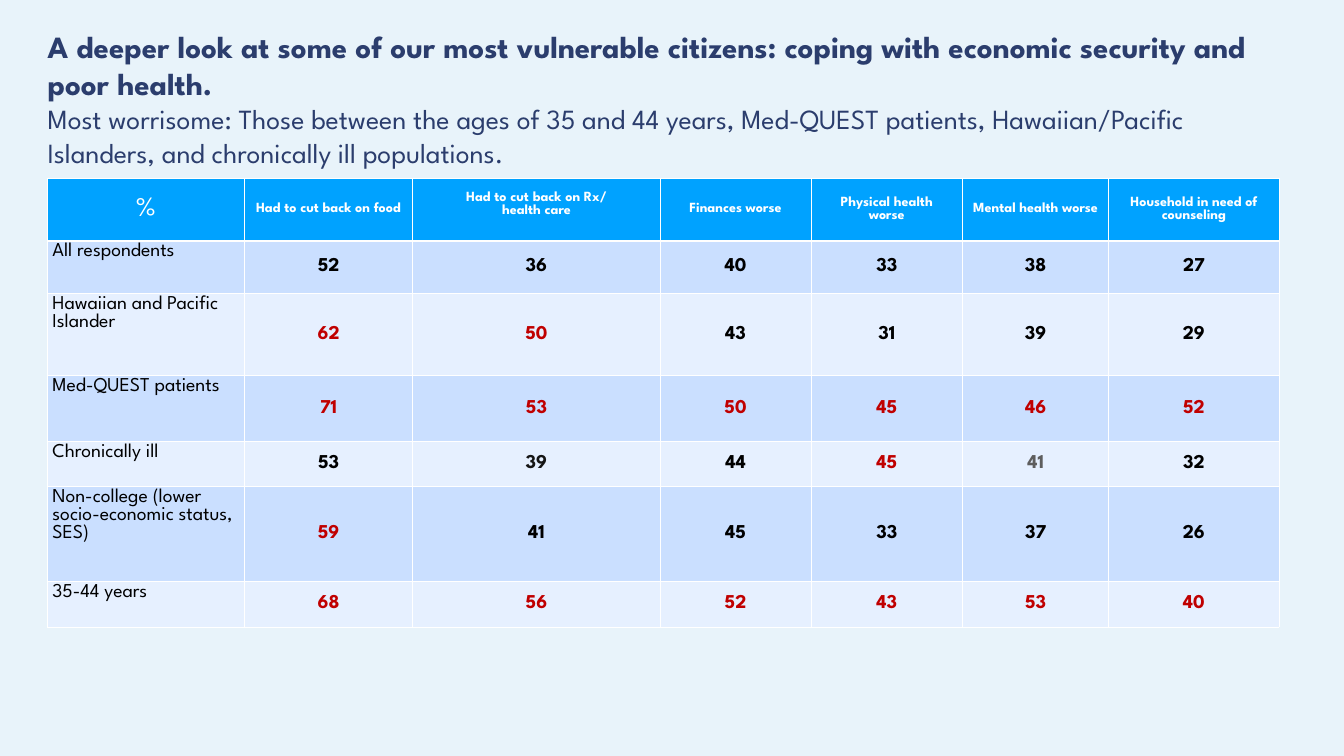
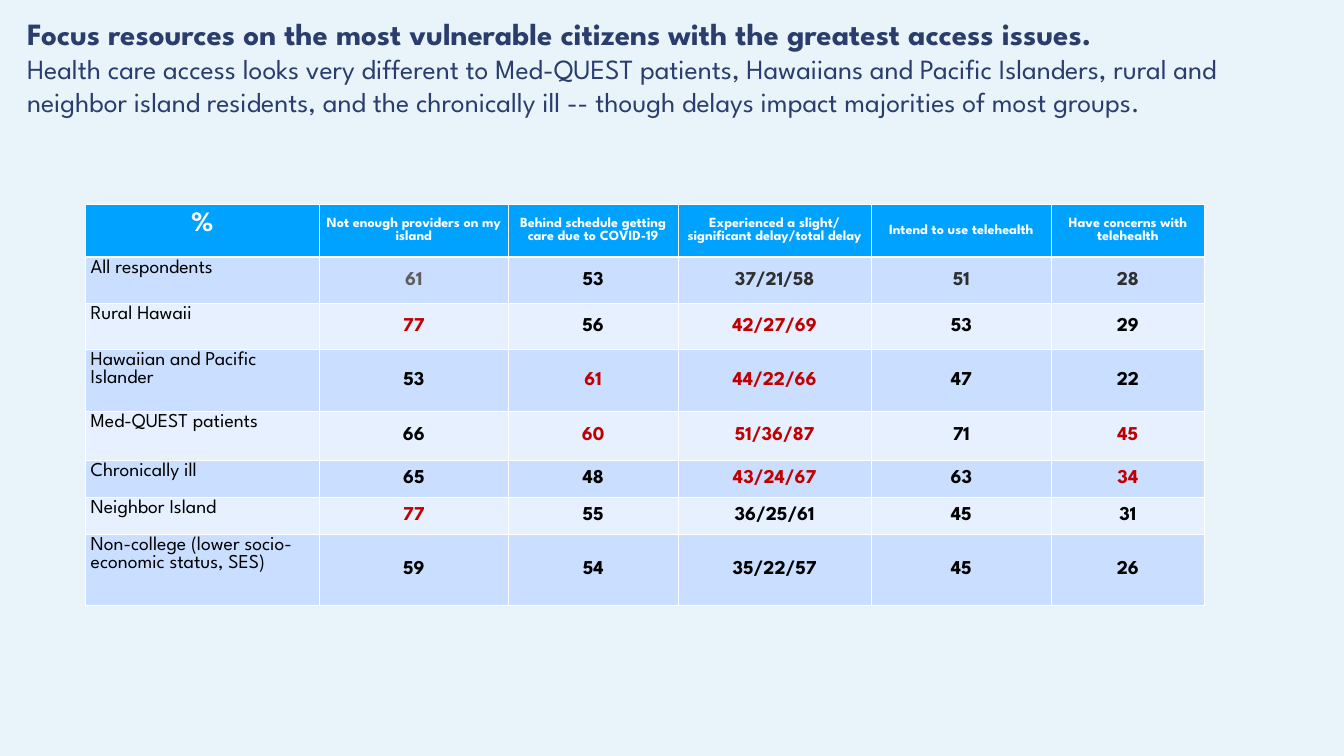
from lxml import etree
from pptx import Presentation
from pptx.dml.color import RGBColor
from pptx.enum import text as t
from pptx.oxml.ns import qn
from pptx.util import Pt

FONT = "League Spartan"
PAGE, NAVY, WHITE, BLACK = "E8F3FA", "2B3D6D", "FFFFFF", "000000"
HEADER, BANDS = "00A2FF", ("CADFFF", "E6F0FF")
# A mark after a value picks its colour: "62!" is an alert.
TONES = {"!": "C00000", "~": "5E5E5E", "+": "2F2F2F", "^": "151515"}


def color(value):
    return RGBColor.from_string(value)


def add_run(paragraph, words, size, ink, bold=False):
    run = paragraph.add_run()
    run.text = words
    font = run.font
    font.name, font.size, font.bold = FONT, Pt(size), bold
    font.color.rgb = color(ink)


def set_title(slide, left, top, headline, detail):
    title = slide.shapes.title
    title.left, title.top, title.width, title.height = (
        Pt(left), Pt(top), Pt(1730), Pt(113))
    frame = title.text_frame
    frame.word_wrap = True
    frame.auto_size = t.MSO_AUTO_SIZE.NONE
    frame.vertical_anchor = t.MSO_ANCHOR.TOP
    frame.margin_left = frame.margin_right = Pt(4)
    frame.margin_top = frame.margin_bottom = Pt(4)
    paragraph = frame.paragraphs[0]
    paragraph.alignment = t.PP_ALIGN.LEFT
    paragraph.line_spacing = 1.0
    add_run(paragraph, headline, 44.1, NAVY, bold=True)
    paragraph.add_line_break()
    add_run(paragraph, detail, 39.6, NAVY)


def set_borders(cell, bottom):
    properties = cell._tc.get_or_add_tcPr()
    for side, width in (("L", 1), ("R", 1), ("T", 1), ("B", bottom)):
        line = etree.SubElement(properties, qn(f"a:ln{side}"), w=str(Pt(width)))
        fill = etree.SubElement(line, qn("a:solidFill"))
        etree.SubElement(fill, qn("a:srgbClr"), val=WHITE)


def fill_cell(cell, words, size, ink, back, bold=True, centred=True, bottom=1):
    set_borders(cell, bottom)
    cell.fill.solid()
    cell.fill.fore_color.rgb = color(back)
    cell.vertical_anchor = t.MSO_ANCHOR.MIDDLE if centred else t.MSO_ANCHOR.TOP
    for index, line in enumerate(words.split("\n")):
        frame = cell.text_frame
        paragraph = frame.add_paragraph() if index else frame.paragraphs[0]
        paragraph.alignment = t.PP_ALIGN.CENTER if centred else t.PP_ALIGN.LEFT
        add_run(paragraph, line, size, ink, bold)


def fill_value(cell, marked, back):
    ink = TONES.get(marked[-1], BLACK)
    fill_cell(cell, marked.rstrip("".join(TONES)), 28, ink, back)
    cell.margin_left = cell.margin_right = cell.margin_top = Pt(0.72)
    cell.margin_bottom = 0


def add_survey_table(slide, left, top, widths, heights, headings, groups,
                     percent_bold):
    table = slide.shapes.add_table(
        len(heights), len(widths), Pt(left), Pt(top),
        Pt(sum(widths)), Pt(sum(heights))).table
    for column, width in zip(table.columns, widths):
        column.width = Pt(width)
    for row, height in zip(table.rows, heights):
        row.height = Pt(height)
    fill_cell(table.cell(0, 0), "%", 40, WHITE, HEADER, percent_bold, bottom=3)
    for column, heading in enumerate(headings, 1):
        fill_cell(table.cell(0, column), heading, 20, WHITE, HEADER, bottom=3)
    for row, (group, values) in enumerate(groups, 1):
        back = BANDS[(row - 1) % 2]
        fill_cell(table.cell(row, 0), group, 28, BLACK, back,
                  bold=False, centred=False)
        for column, value in enumerate(values.split(), 1):
            fill_value(table.cell(row, column), value, back)
    return table


def add_coping_slide(deck):
    slide = deck.slides.add_slide(deck.slide_layouts[5])
    set_title(
        slide, 64, 36,
        "A deeper look at some of our most vulnerable citizens: coping with "
        "economic security and poor health.",
        "Most worrisome: Those between the ages of 35 and 44 years, Med-QUEST "
        "patients, Hawaiian/Pacific Islanders, and chronically ill populations.")
    table = add_survey_table(
        slide, 67.7, 255,
        widths=(281.5, 240.5, 353.5, 215.3, 216.7, 208.8, 243.4),
        heights=(88.9, 75.1, 117.4, 93.8, 64.2, 135.7, 65.7),
        headings=("Had to cut back on food",
                  "Had to cut back on Rx/\nhealth care",
                  "Finances worse", "Physical health\nworse",
                  "Mental health worse", "Household in need of counseling"),
        groups=(
            ("All respondents", "52 36 40 33 38 27"),
            ("Hawaiian and Pacific Islander", "62! 50! 43 31 39 29"),
            ("Med-QUEST patients", "71! 53! 50! 45! 46! 52!"),
            ("Chronically ill", "53 39^ 44 45! 41~ 32"),
            ("Non-college (lower socio-economic status, SES)",
             "59! 41 45 33 37 26"),
            ("35-44 years", "68! 56! 52! 43! 53! 40!")),
        percent_bold=False)
    table.cell(0, 2).margin_bottom = Pt(18)


def add_access_slide(deck):
    slide = deck.slides.add_slide(deck.slide_layouts[5])
    set_title(
        slide, 34.6, 17.3,
        "Focus resources on the most vulnerable citizens with the greatest "
        "access issues.",
        "Health care access looks very different to Med-QUEST patients, "
        "Hawaiians and Pacific Islanders, rural and neighbor island residents, "
        "and the chronically ill -- though delays impact majorities of most "
        "groups.")
    table = add_survey_table(
        slide, 122.4, 292.3,
        widths=(333.4, 270.7, 241.9, 276.5, 257, 218.9),
        heights=(74.9, 65.8, 65.8, 88.6, 70.4, 52.8, 52.8, 101.6),
        headings=("Not enough providers on my island",
                  "Behind schedule getting care due to COVID-19",
                  "Experienced a slight/ significant delay/total delay",
                  "Intend to use telehealth", "Have concerns with telehealth"),
        groups=(
            ("All respondents", "61~ 53 37/21/58+ 51+ 28+"),
            ("Rural Hawaii", "77! 56 42/27/69! 53 29"),
            ("Hawaiian and Pacific Islander", "53 61! 44/22/66! 47 22"),
            ("Med-QUEST patients", "66 60! 51/36/87! 71 45!"),
            ("Chronically ill", "65 48 43/24/67! 63 34!"),
            ("Neighbor Island", "77! 55 36/25/61 45 31"),
            ("Non-college (lower socio-economic status, SES)",
             "59 54 35/22/57 45 26")),
        percent_bold=True)
    table.cell(0, 0).margin_bottom = Pt(22)


def main():
    deck = Presentation()
    deck.slide_width, deck.slide_height = Pt(1920), Pt(1080)
    backdrop = deck.slide_master.background.fill
    backdrop.solid()
    backdrop.fore_color.rgb = color(PAGE)
    add_coping_slide(deck)
    add_access_slide(deck)
    deck.save("out.pptx")


if __name__ == "__main__":
    main()
